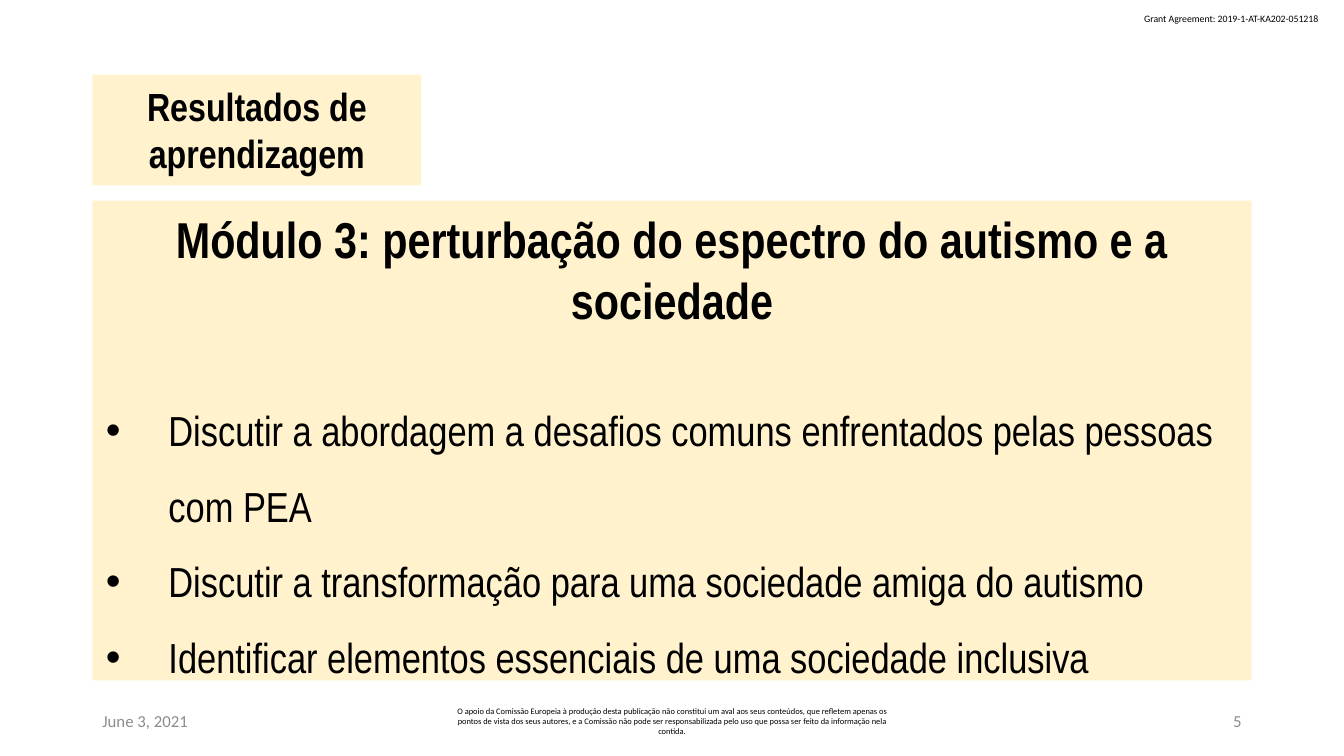
from pptx import Presentation, util as u
from pptx.dml.color import RGBColor
from pptx.enum import text
from pptx.oxml.xmlchemy import OxmlElement

COLOURS = {"panel": "FFF2CC", "ink": "000000", "muted": "8C8C8C"}
HEADING_FONT, SMALL_FONT = "Arial Narrow", "Calibri"
LEFT, CENTER, RIGHT = text.PP_ALIGN.LEFT, text.PP_ALIGN.CENTER, text.PP_ALIGN.RIGHT
TOP, MIDDLE = text.MSO_ANCHOR.TOP, text.MSO_ANCHOR.MIDDLE

MARGIN, CONTENT_WIDTH = 6.88, 86.25
FOOTER_TOP, FOOTER_HEIGHT = 92.67, 5.33

OUTCOMES = [
    "Discutir a abordagem a desafios comuns enfrentados pelas pessoas com PEA",
    "Discutir a transformação para uma sociedade amiga do autismo",
    "Identificar elementos essenciais de uma sociedade inclusiva",
]
DISCLAIMER = (
    "O apoio da Comissão Europeia à produção desta publicação não constitui um aval "
    "aos seus conteúdos, que refletem apenas os pontos de vista dos seus autores, e a "
    "Comissão não pode ser responsabilizada pelo uso que possa ser feito da informação "
    "nela contida."
)


class OutcomesSlide:
    """Places elements by percent of the slide's width and height."""

    def __init__(self, presentation):
        self.presentation = presentation
        self.slide = presentation.slides.add_slide(presentation.slide_layouts[1])

    def across(self, percent):
        return round(self.presentation.slide_width * percent / 100)

    def down(self, percent):
        return round(self.presentation.slide_height * percent / 100)

    def box(self, left, top, width, height):
        return self.across(left), self.down(top), self.across(width), self.down(height)

    def panel(self, shape, *place):
        """Turns a placeholder into a filled panel and returns its text frame."""
        shape.left, shape.top, shape.width, shape.height = self.box(*place)
        shape.fill.solid()
        shape.fill.fore_color.rgb = RGBColor.from_string(COLOURS["panel"])
        frame = shape.text_frame
        frame.auto_size = text.MSO_AUTO_SIZE.NONE
        frame.word_wrap = True
        frame.vertical_anchor = TOP
        frame.margin_left = frame.margin_right = self.across(1)
        frame.margin_top = frame.margin_bottom = self.down(1)
        return frame

    def add_words(self, paragraph, words, size, font=HEADING_FONT, colour="ink",
                  bold=False, align=LEFT, spacing=1.0, before=0):
        paragraph.alignment = align
        paragraph.line_spacing = spacing
        paragraph.space_before = u.Pt(before)
        paragraph.space_after = u.Pt(0)
        run = paragraph.add_run()
        run.text = words
        run.font.size = u.Pt(size)
        run.font.name = font
        run.font.bold = bold
        run.font.color.rgb = RGBColor.from_string(COLOURS[colour])

    def indent(self, paragraph, amount, bullet=None):
        """Sets a hanging indent, with a bullet sign or with none."""
        properties = paragraph._p.get_or_add_pPr()
        properties.set("marL", str(amount))
        properties.set("indent", str(-amount))
        if bullet:
            font = OxmlElement("a:buFont")
            font.set("typeface", "Arial")
            sign = OxmlElement("a:buChar")
            sign.set("char", bullet)
            properties.extend([font, sign])
        else:
            properties.append(OxmlElement("a:buNone"))

    def title(self, words, *place):
        frame = self.panel(self.slide.shapes.title, *place)
        self.add_words(frame.paragraphs[0], words, 28, bold=True, align=CENTER)

    def outcomes(self, heading, items, *place):
        frame = self.panel(self.slide.placeholders[1], *place)
        self.indent(frame.paragraphs[0], 0)
        self.add_words(frame.paragraphs[0], heading, 36, bold=True, align=CENTER)
        for number, item in enumerate(items):
            paragraph = frame.add_paragraph()
            self.indent(paragraph, u.Inches(0.62), "•")
            self.add_words(paragraph, item, 30, spacing=1.5, before=0 if number else 36)

    def label(self, words, size, place, colour="ink", align=LEFT, anchor=MIDDLE, wrap=True):
        frame = self.slide.shapes.add_textbox(*self.box(*place)).text_frame
        frame.word_wrap = wrap
        frame.vertical_anchor = anchor
        self.add_words(frame.paragraphs[0], words, size, SMALL_FONT, colour, align=align)

    def footer(self, words, size, left, width, colour, align):
        self.label(words, size, (left, FOOTER_TOP, width, FOOTER_HEIGHT), colour, align)


def main():
    presentation = Presentation()
    presentation.slide_width, presentation.slide_height = u.Inches(13.33), u.Inches(7.5)
    slide = OutcomesSlide(presentation)
    slide.label("Grant Agreement: 2019-1-AT-KA202-051218", 7, (84.4, 1.07, 14.78, 2.93),
                anchor=TOP, wrap=False)
    slide.title("Resultados de aprendizagem", MARGIN, 9.87, 24.46, 14.67)
    slide.outcomes("Módulo 3: perturbação do espectro do autismo e a sociedade", OUTCOMES,
                   MARGIN, 26.53, CONTENT_WIDTH, 63.47)
    side, middle = 22.5, 33.75
    slide.footer("June 3, 2021", 12, MARGIN, side, "muted", LEFT)
    slide.footer(DISCLAIMER, 6, (100 - middle) / 2, middle, "ink", CENTER)
    slide.footer("5", 12, MARGIN + CONTENT_WIDTH - side, side, "muted", RIGHT)
    presentation.save("out.pptx")


if __name__ == "__main__":
    main()
